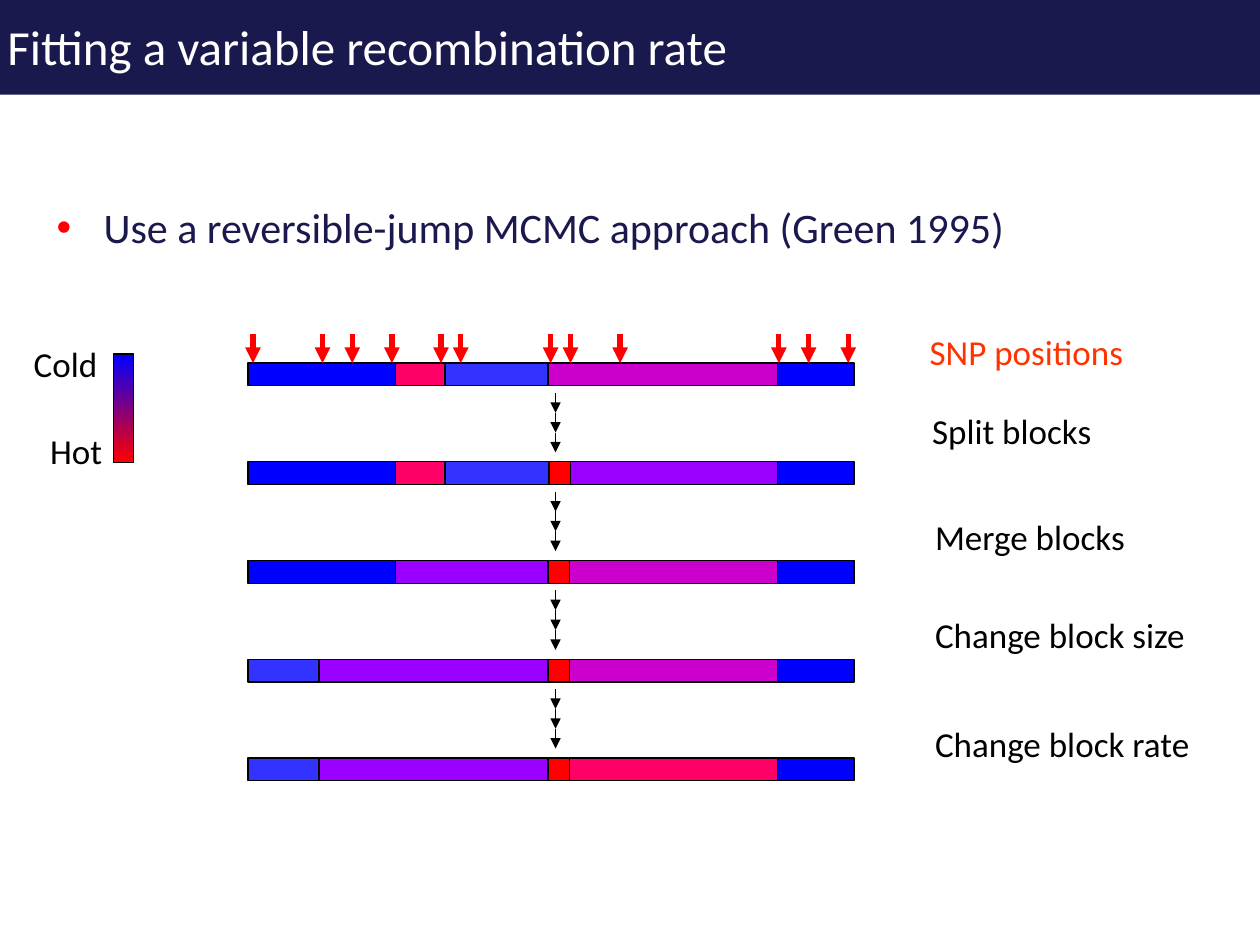
from lxml import etree
from pptx import Presentation
from pptx import util as u
from pptx.dml.color import RGBColor
from pptx.enum import shapes, text
from pptx.oxml.ns import qn

THEME = {
    "font": "Calibri", "title": 28, "body": 24, "label": 20,
    "thin": 0.75, "thick": 3,
    "navy": "19194D", "white": "FFFFFF", "black": "000000", "snp": "FF3300",
    "cold": "0000FF", "cool": "3333FF", "mild": "9900FF",
    "warm": "CC00CC", "pink": "FF0066", "hot": "FF0000",
}

TITLE = "Fitting a variable recombination rate"
POINT = "Use a reversible-jump MCMC approach (Green 1995)"

# All positions are in centimetres.
TOP, PITCH, BAR = 7.32, 1.99, 0.46
STEM, DROP, STEP = 11.2, 0.6, 0.4

# Blocks of each bar as (left, right, heat), back to front.
BARS = [
    [(5, 7.98, "cold"), (7.98, 8.97, "pink"), (8.97, 11.38, "cool"),
     (11.05, 15.67, "warm"), (15.67, 17.22, "cold")],
    [(5, 7.98, "cold"), (7.98, 8.97, "pink"), (8.97, 11.38, "cool"),
     (11.38, 15.67, "mild"), (15.67, 17.22, "cold"), (11.07, 11.5, "hot")],
    [(5, 7.98, "cold"), (11.38, 15.67, "warm"), (15.67, 17.22, "cold"),
     (11.05, 11.48, "hot"), (7.98, 11.05, "mild")],
    [(5, 6.43, "cool"), (11.38, 15.67, "warm"), (15.67, 17.22, "cold"),
     (11.05, 11.48, "hot"), (6.43, 11.05, "mild")],
    [(5, 6.43, "cool"), (11.38, 15.67, "pink"), (15.67, 17.22, "cold"),
     (11.05, 11.48, "hot"), (6.43, 11.05, "mild")],
]

SNPS = [5.1, 6.5, 7.1, 7.9, 8.89, 9.29, 11.1, 11.5, 12.5, 15.7, 16.3, 17.1]

# Label, left, top, width, colour
LABELS = [
    ("Cold", 0.43, 6.78, 1.8, "black"),
    ("Hot", 0.76, 8.53, 1.57, "black"),
    ("SNP positions", 18.49, 6.53, 4.47, "snp"),
    ("Split blocks", 18.54, 8.13, 3.76, "black"),
    ("Merge blocks", 18.6, 10.26, 4.37, "black"),
    ("Change block size", 18.6, 12.24, 5.59, "black"),
    ("Change block rate", 18.6, 14.45, 5.69, "black"),
]


def color(name):
    return RGBColor.from_string(THEME[name])


def box(slide, x, y, w, h, fill=None, line=True):
    rect = slide.shapes.add_shape(
        shapes.MSO_SHAPE.RECTANGLE, u.Cm(x), u.Cm(y), u.Cm(w), u.Cm(h))
    rect.shadow.inherit = False
    if fill:
        rect.fill.solid()
        rect.fill.fore_color.rgb = color(fill)
    if line:
        rect.line.color.rgb = color("black")
        rect.line.width = u.Pt(THEME["thin"])
    else:
        rect.line.fill.background()
    return rect


def write(shape, words, size, ink, wrap=True):
    frame = shape.text_frame
    frame.text = words
    frame.word_wrap = wrap
    para = frame.paragraphs[0]
    para.alignment = text.PP_ALIGN.LEFT
    font = para.runs[0].font
    font.name, font.size = THEME["font"], u.Pt(THEME[size])
    font.color.rgb = color(ink)
    return para


def area(slide, x, y, w, h):
    return slide.shapes.add_textbox(u.Cm(x), u.Cm(y), u.Cm(w), u.Cm(h))


def arrow(slide, x, y, end, ink, width):
    """Draw a downward arrow from y to end."""
    line = slide.shapes.add_connector(
        shapes.MSO_CONNECTOR.STRAIGHT, u.Cm(x), u.Cm(y), u.Cm(x), u.Cm(end))
    line.line.color.rgb = color(ink)
    line.line.width = u.Pt(THEME[width])
    etree.SubElement(line.line._get_or_add_ln(), qn("a:tailEnd"), type="triangle")
    etree.SubElement(line._element.spPr, qn("a:effectLst"))


def bullet(para, ink, indent):
    props = para._p.get_or_add_pPr()
    props.set("marL", str(u.Cm(indent)))
    props.set("indent", str(-u.Cm(indent)))
    tint = etree.SubElement(props, qn("a:buClr"))
    etree.SubElement(tint, qn("a:srgbClr"), val=THEME[ink])
    etree.SubElement(props, qn("a:buFont"), typeface="Arial")
    etree.SubElement(props, qn("a:buChar"), char="•")
    para.space_before = u.Pt(THEME["body"] * 0.2)


def legend(slide):
    scale = box(slide, 2.29, 7.14, 0.4, 2.18)
    scale.fill.gradient()
    scale.fill.gradient_angle = 270
    for stop, heat in zip(scale.fill.gradient_stops, ("cold", "hot")):
        stop.color.rgb = color(heat)


def main():
    deck = Presentation()
    deck.slide_width, deck.slide_height = u.Cm(25.4), u.Cm(19.05)
    slide = deck.slides.add_slide(deck.slide_layouts[6])

    head = box(slide, -0.1, -0.05, 25.5, 1.96, "navy", line=False)
    head.text_frame.vertical_anchor = text.MSO_ANCHOR.MIDDLE
    write(head, TITLE, "title", "white")
    bullet(write(area(slide, 0.89, 3.94, 22.86, 12.57), POINT, "body", "navy"),
           "hot", 0.95)

    legend(slide)
    for row, blocks in enumerate(BARS):
        y = TOP + row * PITCH
        for left, right, heat in blocks:
            box(slide, left, y, right - left, BAR, heat)
        if row < len(BARS) - 1:
            for i in range(3):
                start = y + DROP + i * STEP
                arrow(slide, STEM, start, start + STEP, "black", "thin")

    for x in SNPS:
        arrow(slide, x, TOP - 0.59, TOP, "hot", "thick")
    for words, x, y, w, ink in LABELS:
        write(area(slide, x, y, w, 1.12), words, "label", ink, wrap=False)

    deck.save("out.pptx")


if __name__ == "__main__":
    main()
